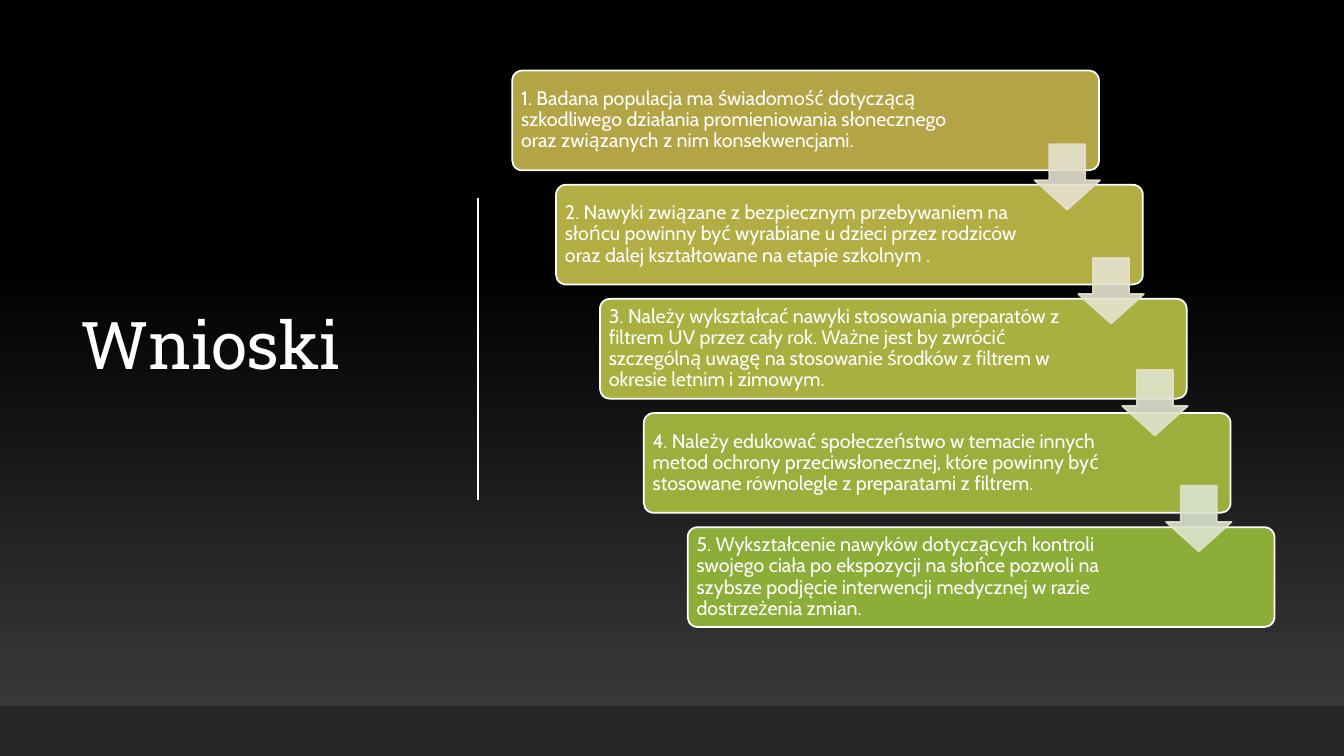
"""Build the conclusions slide: a staircase of five boxes linked by arrows."""
from lxml.etree import SubElement
from pptx import Presentation
from pptx.dml.color import RGBColor
from pptx.enum.shapes import MSO_CONNECTOR, MSO_SHAPE
from pptx.enum.text import MSO_ANCHOR, MSO_AUTO_SIZE, PP_ALIGN
from pptx.oxml.ns import qn
from pptx.util import Inches, Pt

STEPS = [
    ("B3A446", "1. Badana populacja ma świadomość dotyczącą szkodliwego działania "
               "promieniowania słonecznego oraz związanych z nim konsekwencjami."),
    ("B2AE43", "2. Nawyki związane z bezpiecznym przebywaniem na słońcu powinny być "
               "wyrabiane u dzieci przez rodziców oraz dalej kształtowane na etapie szkolnym ."),
    ("A8B03F", "3. Należy wykształcać nawyki stosowania preparatów z filtrem UV przez cały rok. "
               "Ważne jest by zwrócić szczególną uwagę na stosowanie środków z filtrem "
               "w okresie letnim i zimowym."),
    ("9BAF3C", "4. Należy edukować społeczeństwo w temacie innych metod ochrony "
               "przeciwsłonecznej, które powinny być stosowane równolegle z preparatami z filtrem."),
    ("8DAD39", "5. Wykształcenie nawyków dotyczących kontroli swojego ciała po ekspozycji "
               "na słońce pozwoli na szybsze podjęcie interwencji medycznej "
               "w razie dostrzeżenia zmian."),
]
ARROWS = [("E5E0CF", 1.43), ("E4E4CF", 2.56), ("DFE3CE", 3.67), ("DBE3CE", 4.82)]
STEP_X, STEP_Y = 0.435, 1.1325


def rgb(color):
    return RGBColor.from_string(color)


def add_box(kind, x, y, w, h, fill, line=None):
    sp = s.shapes.add_shape(kind, Inches(x), Inches(y), Inches(w), Inches(h))
    sp.shadow.inherit = False
    sp.fill.solid()
    sp.fill.fore_color.rgb = rgb(fill)
    if line:
        sp.line.color.rgb = rgb(line)
        sp.line.width = Pt(1.25)
    else:
        sp.line.fill.background()
    return sp


prs = Presentation()
prs.slide_width, prs.slide_height = Inches(13.33), Inches(7.5)
s = prs.slides.add_slide(prs.slide_layouts[5])

bg = s.background.fill
bg.gradient()
bg.gradient_angle = 90
for stop, (pos, color) in zip(bg.gradient_stops, [(0, "3F3F3F"), (0.65, "000000")]):
    stop.position = pos
    stop.color.rgb = rgb(color)

title = s.shapes.title
title.left, title.top = Inches(0.7), Inches(0.69)
title.width, title.height = Inches(3.69), Inches(5.53)
tf = title.text_frame
tf.text = "Wnioski"
tf.word_wrap = True
tf.auto_size = MSO_AUTO_SIZE.NONE
tf.vertical_anchor = MSO_ANCHOR.MIDDLE
p = tf.paragraphs[0]
p.alignment = PP_ALIGN.LEFT
p.line_spacing = 0.9
r = p.runs[0]
r.font.name, r.font.size = "Roboto Slab", Pt(47)
r.font.color.rgb = rgb("FFFFFF")
r.font._element.set("spc", "-50")

divider = s.shapes.add_connector(
    MSO_CONNECTOR.STRAIGHT, Inches(4.74), Inches(1.96), Inches(4.74), Inches(4.96))
divider.line.color.rgb = rgb("FFFFFF")
divider.line.width = Pt(1)
SubElement(divider._element.spPr, qn("a:effectLst"))

add_box(MSO_SHAPE.RECTANGLE, 0, 7, 13.33, 0.5, "262626")

for i, (color, text) in enumerate(STEPS):
    sp = add_box(MSO_SHAPE.ROUNDED_RECTANGLE, 5.08 + i * STEP_X, 0.7 + i * STEP_Y,
                 5.82, 0.99, color, "FFFFFF")
    sp.adjustments[0] = 0.1
    tf = sp.text_frame
    tf.text = text
    tf.word_wrap = True
    tf.vertical_anchor = MSO_ANCHOR.MIDDLE
    tf.margin_left = tf.margin_top = tf.margin_bottom = Inches(0.06)
    tf.margin_right = Inches(1.14)
    p = tf.paragraphs[0]
    p.alignment = PP_ALIGN.LEFT
    p.line_spacing = 0.9
    r = p.runs[0]
    r.font.name, r.font.size = "Cabin", Pt(14)
    r.font.color.rgb = rgb("FFFFFF")

for i, (color, y) in enumerate(ARROWS):
    sp = add_box(MSO_SHAPE.DOWN_ARROW, 10.26 + i * STEP_X, y, 0.65, 0.65, color, "E5E0CF")
    sp.adjustments[0], sp.adjustments[1] = 0.55, 0.45
    for clr in sp._element.spPr.iter(qn("a:srgbClr")):
        SubElement(clr, qn("a:alpha"), val="90000")

prs.save("out.pptx")
